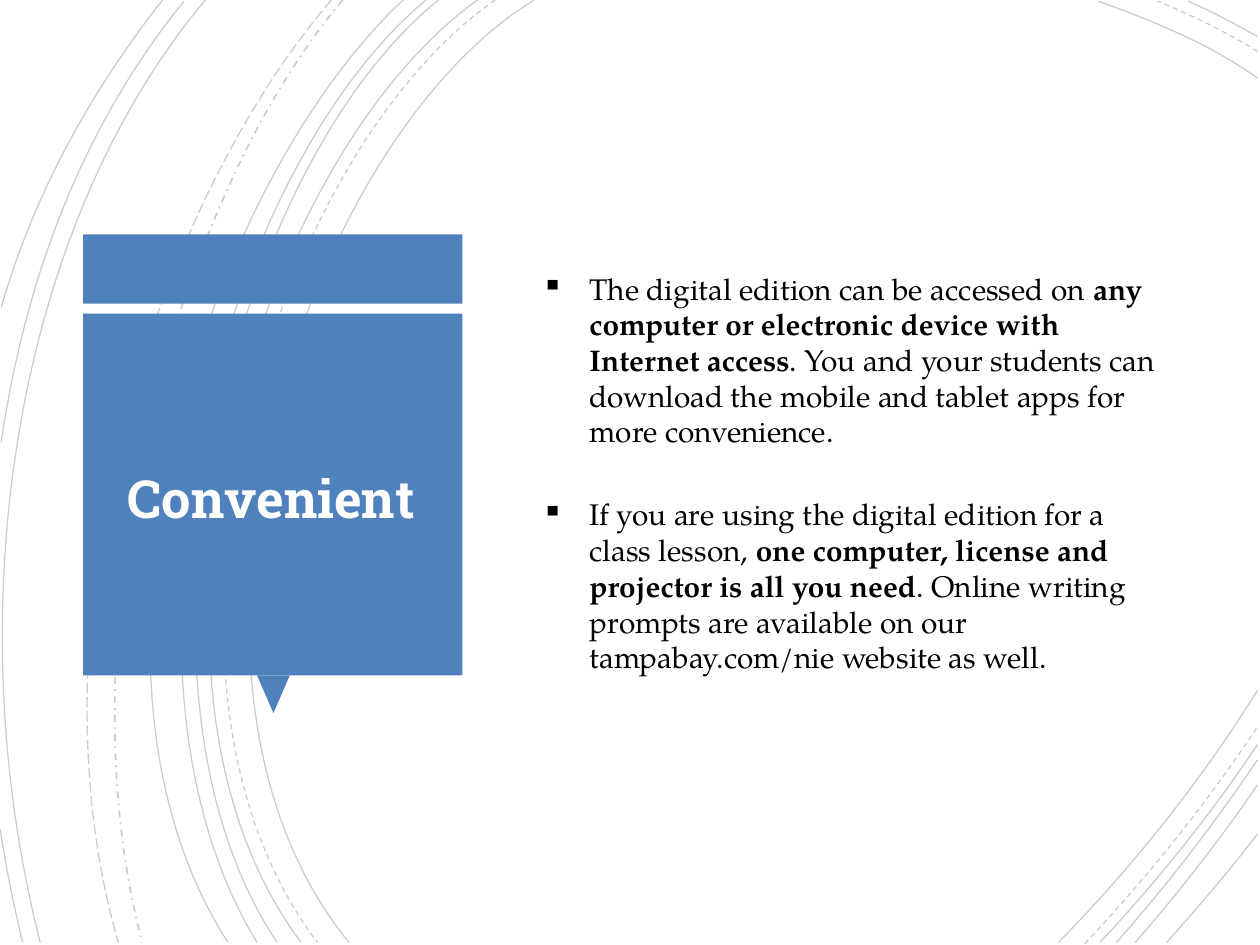
from dataclasses import dataclass

from lxml.etree import SubElement
from pptx import Presentation
from pptx.dml.color import RGBColor
from pptx.enum.dml import MSO_LINE_DASH_STYLE as Dash
from pptx.enum.shapes import MSO_SHAPE as Preset
from pptx.enum.text import MSO_ANCHOR as Anchor, PP_ALIGN as Align
from pptx.oxml.ns import qn
from pptx.util import Inches, Pt


@dataclass(frozen=True)
class Theme:
    accent: RGBColor = RGBColor.from_string("4F81BD")
    ink: RGBColor = RGBColor.from_string("000000")
    paper: RGBColor = RGBColor.from_string("FFFFFF")
    heading_font: str = "Roboto Slab"
    body_font: str = "TeX Gyre Pagella"
    heading_size: int = 30
    body_size: int = 17
    arc_alpha: int = 20


THEME = Theme()

ARCS = [
    (Dash.SOLID, [
        ((4.24, 0), (2.36, 1.15), (1.07, 5.4), (2.77, 7.48)),
        ((9.98, 0.62), (9.59, 0.34), (9.13, 0.16), (8.72, 0.01)),
        ((8.4, 7.48), (8.97, 6.9), (9.52, 6.22), (9.98, 5.48)),
        ((3.79, 0), (2.02, 1.27), (0.82, 5.37), (2.39, 7.48)),
        ((9.98, 0.29), (9.8, 0.19), (9.62, 0.09), (9.43, 0.01)),
        ((8.73, 7.48), (9.17, 7.01), (9.6, 6.48), (9.98, 5.91)),
        ((3.48, 0), (1.83, 1.33), (0.82, 5.41), (2.2, 7.48)),
        ((8.86, 7.48), (9.25, 7.04), (9.63, 6.55), (9.98, 6.03)),
        ((3.38, 0), (1.73, 1.38), (0.73, 5.33), (2.04, 7.48)),
        ((9.01, 7.48), (9.35, 7.09), (9.68, 6.67), (9.98, 6.23)),
        ((3.2, 0), (1.63, 1.47), (0.4, 5.29), (1.81, 7.48)),
        ((9.26, 7.48), (9.5, 7.21), (9.75, 6.92), (9.98, 6.62)),
        ((1.63, 0), (0.08, 1.85), (-0.34, 4.9), (0.32, 7.48)),
        ((1.46, 0.01), (0.69, 0.96), (0.21, 2.14), (0.01, 3.51)),
        ((0, 6.58), (0.05, 6.89), (0.11, 7.19), (0.18, 7.48)),
        ((1.29, 0), (0.75, 0.69), (0.28, 1.5), (0.01, 2.44)),
    ]),
    (Dash.DASH, [
        ((3.93, 0), (2.13, 1.25), (0.92, 5.37), (2.52, 7.48)),
        ((9.98, 0.41), (9.73, 0.25), (9.45, 0.12), (9.19, 0.01)),
        ((8.61, 7.49), (9.09, 6.98), (9.56, 6.4), (9.98, 5.77)),
    ]),
    (Dash.DASH_DOT, [((2.72, 0), (1.32, 1.66), (0.49, 5.09), (1.13, 7.48))]),
    (Dash.LONG_DASH, [((2.63, 0), (1.18, 1.69), (0.21, 4.99), (0.94, 7.48))]),
]

BODY = [
    [("The digital edition can be accessed on ", False),
     ("any computer or electronic device with Internet access", True),
     (". You and your students can download the mobile and tablet apps for "
      "more convenience.", False)],
    [("If you are using the digital edition for a class lesson, ", False),
     ("one computer, license and projector is all you need", True),
     (". Online writing prompts are available on our tampabay.com/nie "
      "website as well.", False)],
]


def add_arc(slide, points, dash):
    start, *rest = [(Inches(x), Inches(y)) for x, y in points]
    builder = slide.shapes.build_freeform(*start)
    builder.add_line_segments(rest, close=False)
    shape = builder.convert_to_shape()
    segments = list(shape._element.iter(qn("a:lnTo")))
    curve = SubElement(segments[0].getparent(), qn("a:cubicBezTo"))
    for segment in segments:
        curve.append(segment[0])
        segment.getparent().remove(segment)
    shape.shadow.inherit = False
    shape.fill.background()
    shape.line.width = Pt(1 if dash == Dash.DASH_DOT else 0.75)
    shape.line.color.rgb = THEME.ink
    shape.line.dash_style = dash
    color = next(shape.line._ln.iter(qn("a:srgbClr")))
    SubElement(color, qn("a:alpha"), val=str(THEME.arc_alpha * 1000))


def add_block(slide, preset, left, top, width, height, rotation=0):
    shape = slide.shapes.add_shape(
        preset, Inches(left), Inches(top), Inches(width), Inches(height))
    shape.rotation = rotation
    shape.shadow.inherit = False
    shape.fill.solid()
    shape.fill.fore_color.rgb = THEME.accent
    shape.line.fill.background()


def add_bullet(paragraph, indent):
    properties = paragraph._p.get_or_add_pPr()
    properties.set("marL", str(Inches(indent)))
    properties.set("indent", str(Inches(-indent)))
    SubElement(properties, qn("a:buChar"), char="▪")


def add_text(slide, paragraphs, left, top, width, height, *, font, size, color,
             align=Align.LEFT, bullet_indent=0, gap=0):
    box = slide.shapes.add_textbox(
        Inches(left), Inches(top), Inches(width), Inches(height))
    frame = box.text_frame
    frame.word_wrap = True
    frame.vertical_anchor = Anchor.MIDDLE
    for index, runs in enumerate(paragraphs):
        paragraph = frame.add_paragraph() if index else frame.paragraphs[0]
        if bullet_indent:
            add_bullet(paragraph, bullet_indent)
        paragraph.alignment = align
        if index:
            paragraph.space_before = Pt(gap)
        for text, bold in runs:
            run = paragraph.add_run()
            run.text = text
            run.font.name = font
            run.font.size = Pt(size)
            run.font.bold = bold
            run.font.color.rgb = color


def main():
    presentation = Presentation()
    presentation.slide_width = Inches(10)
    presentation.slide_height = Inches(7.5)
    slide = presentation.slides.add_slide(presentation.slide_layouts[6])
    slide.background.fill.solid()
    slide.background.fill.fore_color.rgb = THEME.paper

    for dash, arcs in ARCS:
        for points in arcs:
            add_arc(slide, points, dash)

    add_block(slide, Preset.RECTANGLE, 0.66, 1.86, 3.01, 0.55)
    add_block(slide, Preset.ISOSCELES_TRIANGLE, 2.04, 5.36, 0.26, 0.3, rotation=180)
    add_block(slide, Preset.RECTANGLE, 0.66, 2.49, 3.01, 2.87)

    add_text(slide, [[("Convenient", True)]], 0.74, 2.64, 2.83, 2.62,
             font=THEME.heading_font, size=THEME.heading_size,
             color=THEME.paper, align=Align.CENTER)
    add_text(slide, BODY, 4.2, 0.88, 5.15, 5.74,
             font=THEME.body_font, size=THEME.body_size, color=THEME.ink,
             bullet_indent=0.38, gap=27)

    presentation.save("out.pptx")


if __name__ == "__main__":
    main()
